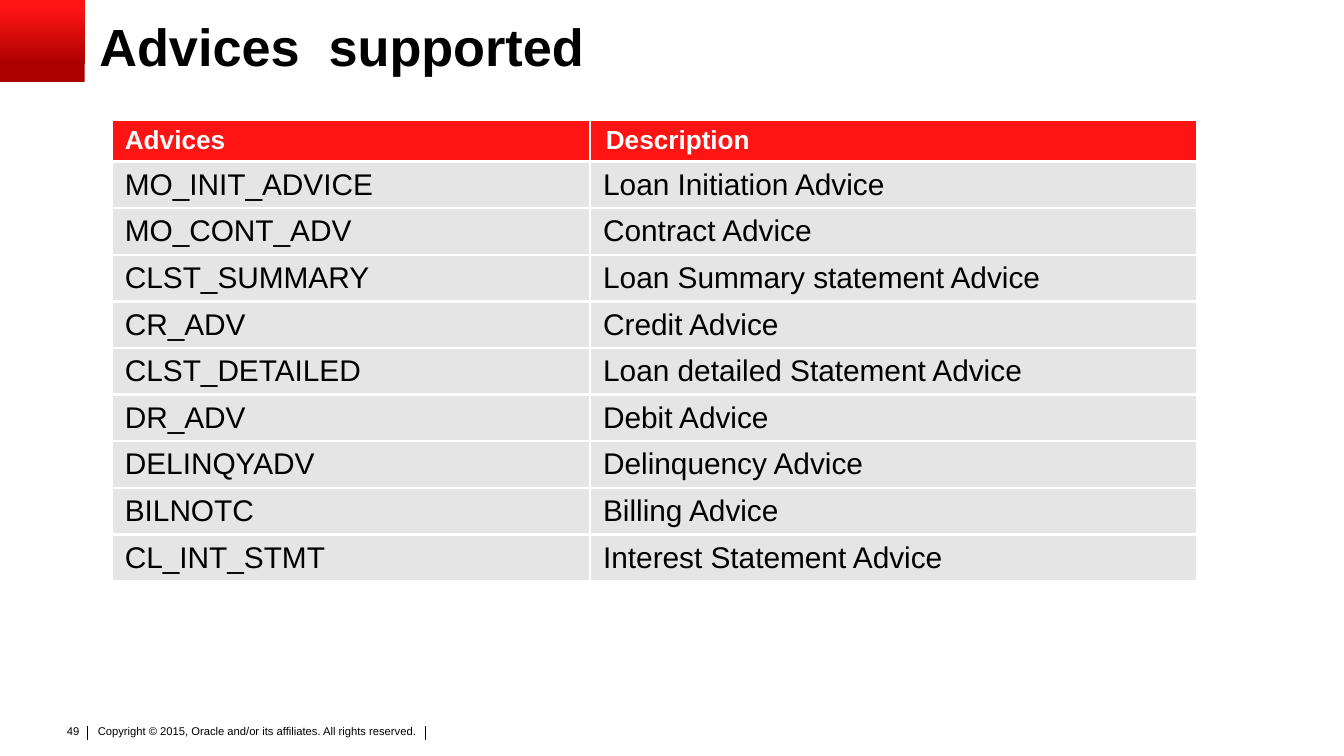
from lxml.etree import SubElement
from pptx import Presentation
from pptx.dml.color import RGBColor
from pptx.enum.shapes import MSO_CONNECTOR, MSO_SHAPE
from pptx.enum.text import MSO_ANCHOR, PP_ALIGN
from pptx.oxml.ns import qn
from pptx.util import Cm, Pt

FONT = "Arial"
BLACK, WHITE, RED, DARK_RED, GREY = "000000", "FFFFFF", "FF1414", "AA0000", "E5E5E5"

ADVICES = [
    ("Advices", "Description"),
    ("MO_INIT_ADVICE", "Loan Initiation Advice"),
    ("MO_CONT_ADV", "Contract Advice"),
    ("CLST_SUMMARY", "Loan Summary statement Advice"),
    ("CR_ADV", "Credit Advice"),
    ("CLST_DETAILED", "Loan detailed Statement Advice"),
    ("DR_ADV", "Debit Advice"),
    ("DELINQYADV", "Delinquency Advice"),
    ("BILNOTC", "Billing Advice"),
    ("CL_INT_STMT", "Interest Statement Advice"),
]


def rgb(color):
    return RGBColor.from_string(color)


def style_text(paragraph, size, color=BLACK, bold=False):
    for run in paragraph.runs:
        run.font.name = FONT
        run.font.size = Pt(size)
        run.font.bold = bold
        run.font.color.rgb = rgb(color)


def set_insets(target, horizontal, vertical):
    target.margin_left = target.margin_right = Cm(horizontal)
    target.margin_top = target.margin_bottom = Cm(vertical)


def add_text(slide, text, box, size, insets, anchor=MSO_ANCHOR.TOP, bold=False, wrap=True):
    text_frame = slide.shapes.add_textbox(*map(Cm, box)).text_frame
    text_frame.text = text
    text_frame.word_wrap = wrap
    text_frame.vertical_anchor = anchor
    set_insets(text_frame, *insets)
    paragraph = text_frame.paragraphs[0]
    style_text(paragraph, size, bold=bold)
    return paragraph


def add_divider(slide, x):
    line = slide.shapes.add_connector(
        MSO_CONNECTOR.STRAIGHT, Cm(x), Cm(13.72), Cm(x), Cm(13.98))
    line.line.color.rgb = rgb(BLACK)
    line.line.width = Pt(0.5)
    SubElement(line._element.spPr, qn("a:effectLst"))


def add_corner_block(slide):
    block = slide.shapes.add_shape(MSO_SHAPE.RECTANGLE, 0, 0, Cm(1.6), Cm(1.55))
    block.shadow.inherit = False
    block.line.fill.background()
    block.fill.gradient()
    block.fill.gradient_angle = 90
    stops = [(0.2, DARK_RED), (0.9, RED)]
    for stop, (position, color) in zip(block.fill.gradient_stops, stops):
        stop.position = position
        stop.color.rgb = rgb(color)


def add_borders(cell):
    properties = cell._tc.get_or_add_tcPr()
    for index, side in enumerate(("a:lnL", "a:lnR", "a:lnT", "a:lnB")):
        border = properties.makeelement(qn(side), {"w": str(Pt(1.5))})
        fill = SubElement(border, qn("a:solidFill"))
        SubElement(fill, qn("a:srgbClr"), val=WHITE)
        properties.insert(index, border)


def add_advice_table(slide):
    widths = (9.04, 11.48)
    header_height, row_height = 0.79, 0.88
    height = header_height + row_height * (len(ADVICES) - 1)
    table = slide.shapes.add_table(
        len(ADVICES), len(widths), Cm(2.11), Cm(2.26), Cm(sum(widths)), Cm(height)).table
    table.horz_banding = False
    for column, width in zip(table.columns, widths):
        column.width = Cm(width)
    for row_index, texts in enumerate(ADVICES):
        header = row_index == 0
        row = table.rows[row_index]
        row.height = Cm(header_height if header else row_height)
        for cell, text in zip(row.cells, texts):
            cell.text_frame.text = text
            cell.vertical_anchor = MSO_ANCHOR.MIDDLE
            set_insets(cell, 0.25, 0.1)
            cell.fill.solid()
            cell.fill.fore_color.rgb = rgb(RED if header else GREY)
            style_text(cell.text_frame.paragraphs[0], 14 if header else 16,
                       WHITE if header else BLACK, header)
            add_borders(cell)
    table.cell(0, 1).margin_left = Cm(0.3)


def add_footer(slide):
    add_text(slide, "Copyright © 2015, Oracle and/or its affiliates. All rights reserved.",
             (1.75, 13.64, 6.96, 0.61), 6, (0.1, 0.05))
    for x in (1.66, 8.04):
        add_divider(slide, x)
    number = add_text(slide, "49", (0.99, 13.56, 0.76, 0.51), 6, (0.25, 0.13), wrap=False)
    number.alignment = PP_ALIGN.RIGHT


def main():
    presentation = Presentation()
    presentation.slide_width = Cm(25.4)
    presentation.slide_height = Cm(14.28)
    slide = presentation.slides.add_slide(presentation.slide_layouts[6])
    add_footer(slide)
    add_corner_block(slide)
    title = add_text(slide, "Advices  supported", (1.88, 0.38, 22.86, 1.12), 28, (0, 0),
                     MSO_ANCHOR.MIDDLE, bold=True)
    title.line_spacing = 0.9
    add_advice_table(slide)
    presentation.save("out.pptx")


if __name__ == "__main__":
    main()
